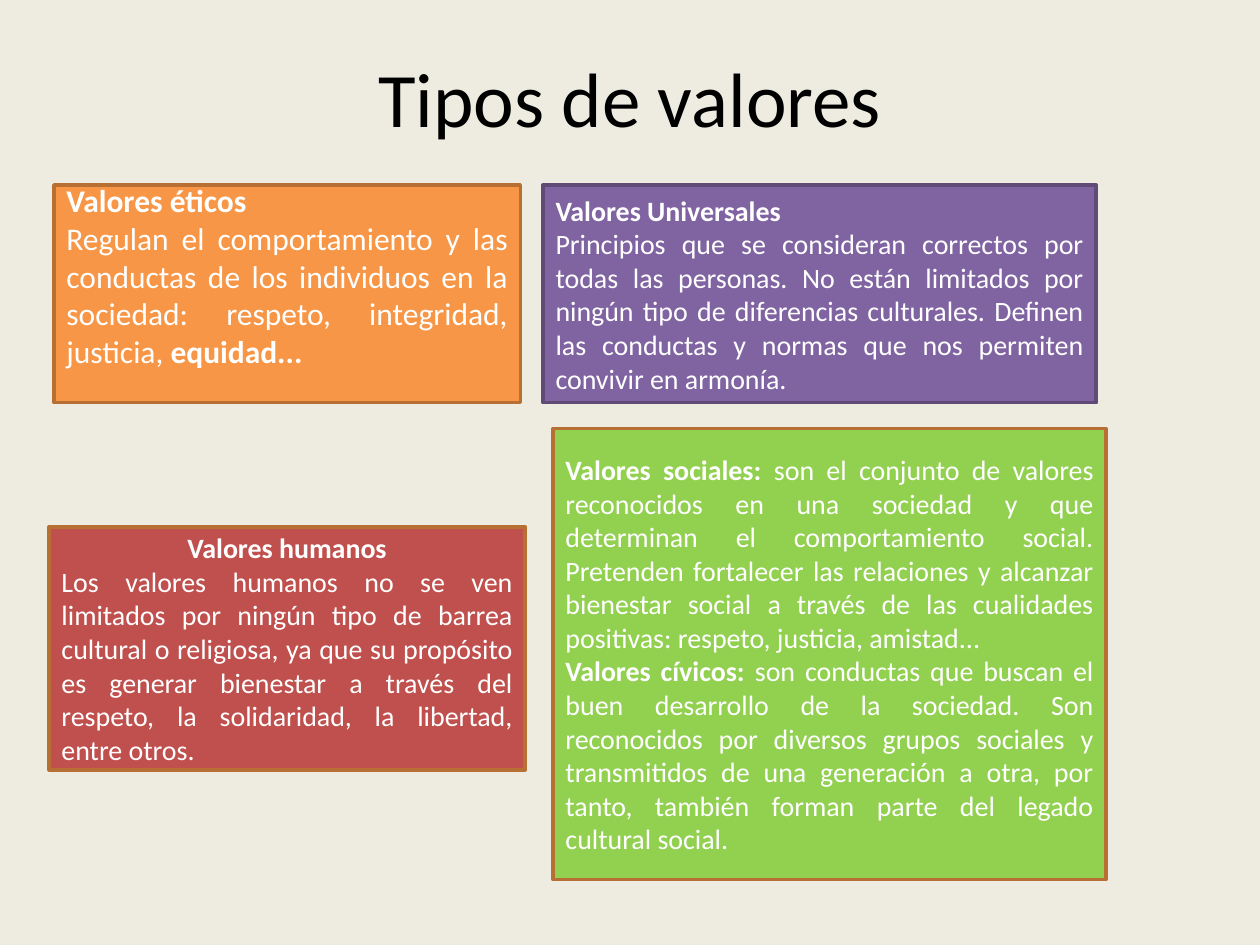
from dataclasses import dataclass

from pptx import Presentation
from pptx.dml.color import RGBColor
from pptx.enum.shapes import MSO_SHAPE
from pptx.enum.text import MSO_ANCHOR, PP_ALIGN
from pptx.slide import Slide
from pptx.text.text import Font
from pptx.util import Cm, Pt

FONT = "Calibri"
ORANGE_EDGE = "B76F34"
TOP_ROW, TOP_ROW_HEIGHT = 3.73, 4.39
RIGHT_WIDTH = 11.15


@dataclass
class Passage:
    """One paragraph as (text, bold) pieces."""
    pieces: list[tuple[str, bool]]
    align: PP_ALIGN = PP_ALIGN.JUSTIFY


@dataclass
class ValueCard:
    """A coloured box; lengths in centimetres."""
    left: float
    top: float
    width: float
    height: float
    fill: str
    edge: str
    passages: list[Passage]
    size: int = 16
    inset_top: float = 0.13
    inset_bottom: float = 0.13


CARDS = [
    ValueCard(1.09, TOP_ROW, 9.4, TOP_ROW_HEIGHT, "F79646", ORANGE_EDGE, [
        Passage([("Valores éticos", True)]),
        Passage([
            ("Regulan el comportamiento y las conductas de los individuos en la "
             "sociedad: respeto, integridad, justicia, ", False),
            ("equidad...", True)]),
    ], size=18, inset_top=0, inset_bottom=0.74),
    ValueCard(10.95, TOP_ROW, RIGHT_WIDTH, TOP_ROW_HEIGHT, "8064A2", "5F4A78", [
        Passage([("Valores Universales", True)], PP_ALIGN.LEFT),
        Passage([
            ("Principios que se consideran correctos por todas las personas. No "
             "están limitados por ningún tipo de diferencias culturales. Definen "
             "las conductas y normas que nos permiten convivir en armonía.", False)]),
    ]),
    ValueCard(0.99, 10.62, 9.6, 4.9, "C0504D", ORANGE_EDGE, [
        Passage([("Valores humanos", True)], PP_ALIGN.CENTER),
        Passage([
            ("Los valores humanos no se ven limitados por ningún tipo de barrea "
             "cultural o religiosa, ya que su propósito es generar bienestar a "
             "través del respeto, la solidaridad, la libertad, entre otros.", False)]),
    ]),
    ValueCard(11.15, 8.64, RIGHT_WIDTH, 9.09, "92D050", ORANGE_EDGE, [
        Passage([
            ("Valores sociales: ", True),
            ("son el conjunto de valores reconocidos en una sociedad y que "
             "determinan el comportamiento social. Pretenden fortalecer las "
             "relaciones y alcanzar bienestar social a través de las cualidades "
             "positivas: respeto, justicia, amistad...", False)]),
        Passage([
            ("Valores cívicos: ", True),
            ("son conductas que buscan el buen desarrollo de la sociedad. Son "
             "reconocidos por diversos grupos sociales y transmitidos de una "
             "generación a otra, por tanto, también forman parte del legado "
             "cultural social.", False)]),
    ]),
]


def color(hex_value: str) -> RGBColor:
    return RGBColor.from_string(hex_value)


def style_font(font: Font, size: int, hex_value: str) -> None:
    font.name = FONT
    font.size = Pt(size)
    font.color.rgb = color(hex_value)


def draw_title(slide: Slide, wording: str) -> None:
    title = slide.shapes.title
    title.left, title.top = Cm(1.27), Cm(0.76)
    title.width, title.height = Cm(22.86), Cm(2.36)
    title.text_frame.text = wording
    title.text_frame.vertical_anchor = MSO_ANCHOR.MIDDLE
    heading = title.text_frame.paragraphs[0]
    heading.alignment = PP_ALIGN.CENTER
    style_font(heading.font, 44, "000000")


def draw_card(slide: Slide, card: ValueCard) -> None:
    box = slide.shapes.add_shape(
        MSO_SHAPE.RECTANGLE,
        Cm(card.left), Cm(card.top), Cm(card.width), Cm(card.height))
    box.shadow.inherit = False
    box.fill.solid()
    box.fill.fore_color.rgb = color(card.fill)
    box.line.color.rgb = color(card.edge)
    box.line.width = Pt(2)

    frame = box.text_frame
    frame.word_wrap = True
    frame.vertical_anchor = MSO_ANCHOR.MIDDLE
    frame.margin_top = Cm(card.inset_top)
    frame.margin_bottom = Cm(card.inset_bottom)
    for index, passage in enumerate(card.passages):
        paragraph = frame.add_paragraph() if index else frame.paragraphs[0]
        paragraph.alignment = passage.align
        style_font(paragraph.font, card.size, "FFFFFF")
        for wording, bold in passage.pieces:
            run = paragraph.add_run()
            run.text = wording
            run.font.bold = bold


def main() -> None:
    presentation = Presentation()
    presentation.slide_width, presentation.slide_height = Cm(25.4), Cm(19.05)
    slide = presentation.slides.add_slide(
        presentation.slide_layouts.get_by_name("Title Only"))
    slide.background.fill.solid()
    slide.background.fill.fore_color.rgb = color("EEECE1")
    draw_title(slide, "Tipos de valores")
    for card in CARDS:
        draw_card(slide, card)
    presentation.save("out.pptx")


if __name__ == "__main__":
    main()
